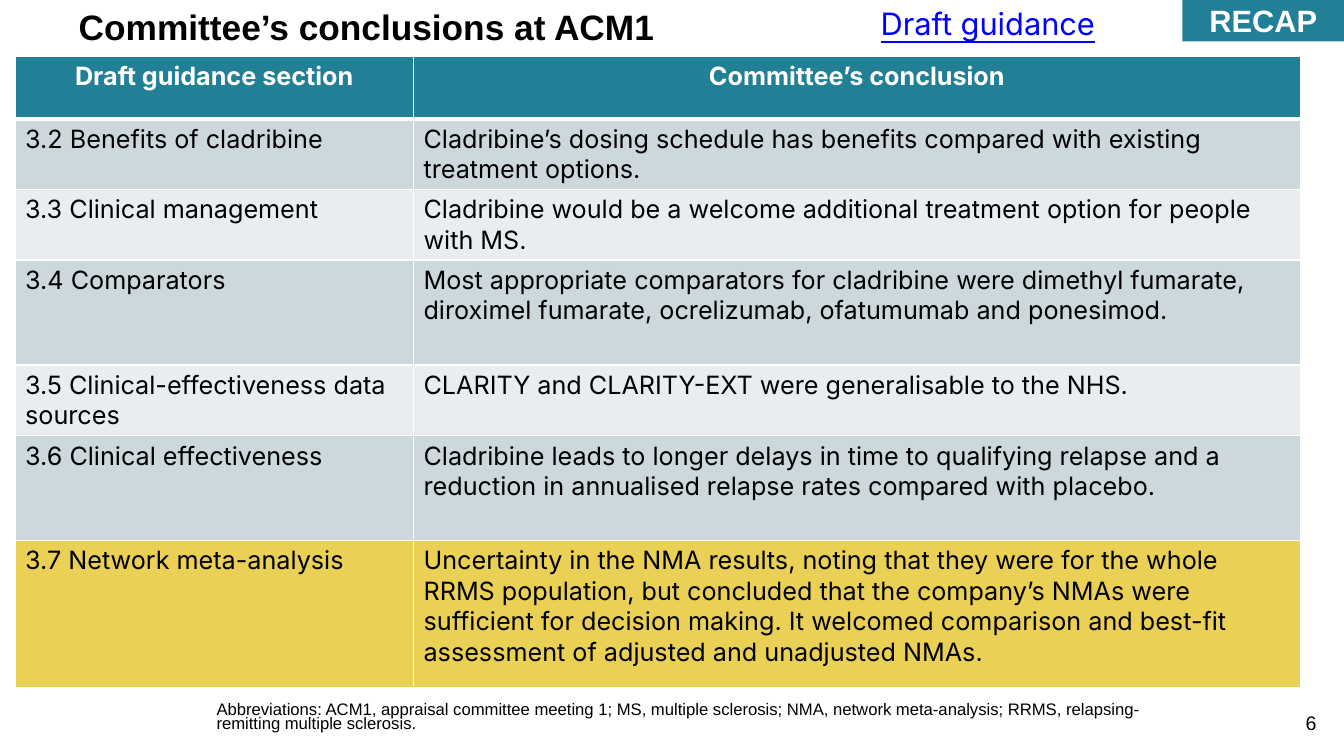
from dataclasses import dataclass

from pptx import Presentation
from pptx import util as u
from pptx.dml import color
from pptx.enum import shapes, text
from pptx.oxml import ns, xmlchemy


@dataclass(frozen=True)
class Theme:
    """Colours, typefaces and type sizes of the deck."""
    teal: str = "228096"
    band_dark: str = "CDD8DD"
    band_light: str = "E8EDEF"
    highlight: str = "EAD054"
    white: str = "FFFFFF"
    black: str = "000000"
    link: str = "0000FF"
    heading_font: str = "Arial"
    body_font: str = "Inter"
    title_size: float = 25.2
    label_size: float = 22
    table_size: float = 18
    number_size: float = 14
    note_size: float = 11.9


THEME = Theme()
HEADERS = ("Draft guidance section", "Committee’s conclusion")
CONCLUSIONS = (
    ("3.2 Benefits of cladribine",
     "Cladribine’s dosing schedule has benefits compared with existing treatment options."),
    ("3.3 Clinical management",
     "Cladribine would be a welcome additional treatment option for people with MS."),
    ("3.4 Comparators",
     "Most appropriate comparators for cladribine were dimethyl fumarate, diroximel fumarate, "
     "ocrelizumab, ofatumumab and ponesimod."),
    ("3.5 Clinical-effectiveness data sources",
     "CLARITY and CLARITY-EXT were generalisable to the NHS."),
    ("3.6 Clinical effectiveness",
     "Cladribine leads to longer delays in time to qualifying relapse and a reduction in "
     "annualised relapse rates compared with placebo."),
    ("3.7 Network meta-analysis",
     "Uncertainty in the NMA results, noting that they were for the whole RRMS population, but "
     "concluded that the company’s NMAs were sufficient for decision making. It welcomed "
     "comparison and best-fit assessment of adjusted and unadjusted NMAs."),
)
COLUMN_SHARES = (0.31, 0.69)
ROW_HEIGHTS = (44.6, 50.4, 50.4, 75, 50.4, 75, 105.2)


def rgb(value):
    """Turn a hex string into a colour."""
    return color.RGBColor.from_string(value)


def write(frame, words, size, font, ink, bold=False, underline=False, align=None):
    """Write one run into the first paragraph of a frame and return the paragraph."""
    frame.word_wrap = True
    para = frame.paragraphs[0]
    para.alignment = align or text.PP_ALIGN.LEFT
    span = para.add_run()
    span.text = words
    span.font.size = u.Pt(size)
    span.font.name = font
    span.font.bold = bold
    span.font.underline = underline
    span.font.color.rgb = rgb(ink)
    return para


def add_text(page, box, *args, **style):
    """Place a text box and return its frame and paragraph."""
    frame = page.shapes.add_textbox(*map(u.Pt, box)).text_frame
    return frame, write(frame, *args, **style)


def add_border(cell, side, width):
    """Draw one white border of a cell."""
    line = xmlchemy.OxmlElement(f"a:ln{side}")
    line.set("w", str(u.Pt(width)))
    fill = xmlchemy.OxmlElement("a:solidFill")
    ink = xmlchemy.OxmlElement("a:srgbClr")
    ink.set("val", THEME.white)
    fill.append(ink)
    line.append(fill)
    cell._tc.get_or_add_tcPr().append(line)


def add_header(page, box):
    """Place the title, the guidance label and the recap tag along the top."""
    left, top, width, height = box
    frame, para = add_text(page, (left, top + 3.6, 885.6, 33.8),
                           "Committee’s conclusions at ACM1", THEME.title_size,
                           THEME.heading_font, THEME.black, bold=True)
    frame.margin_left = u.Pt(56.2)
    frame.vertical_anchor = text.MSO_ANCHOR.MIDDLE
    para.line_spacing = 0.9
    add_text(page, (left + 622, top, 179.3, 33.8), "Draft guidance", THEME.label_size,
             THEME.body_font, THEME.link, underline=True)
    tag_width = 115.4
    tag = page.shapes.add_shape(shapes.MSO_SHAPE.RECTANGLE, u.Pt(left + width - tag_width),
                                u.Pt(top), u.Pt(tag_width), u.Pt(height))
    tag.shadow.inherit = False
    tag.fill.solid()
    tag.fill.fore_color.rgb = rgb(THEME.teal)
    tag.line.fill.background()
    tag.text_frame.vertical_anchor = text.MSO_ANCHOR.MIDDLE
    write(tag.text_frame, "RECAP", THEME.label_size, THEME.heading_font, THEME.white,
          bold=True, align=text.PP_ALIGN.CENTER)


def add_conclusions(page, box):
    """Place the table of conclusions with banded rows and a highlighted last row."""
    rows = (HEADERS, *CONCLUSIONS)
    table = page.shapes.add_table(len(rows), len(HEADERS), *map(u.Pt, box)).table
    for column, share in zip(table.columns, COLUMN_SHARES):
        column.width = u.Pt(round(box[2] * share, 2))
    last = len(rows) - 1
    for index, words in enumerate(rows):
        table.rows[index].height = u.Pt(ROW_HEIGHTS[index])
        header = index == 0
        band = THEME.band_dark if index % 2 else THEME.band_light
        fill = THEME.teal if header else THEME.highlight if index == last else band
        widths = {"L": 1, "R": 1, "T": 3 if index == 1 else 1, "B": 3 if header else 1}
        for cell, entry in zip(table.rows[index].cells, words):
            for side, width in widths.items():
                add_border(cell, side, width)
            cell.fill.solid()
            cell.fill.fore_color.rgb = rgb(fill)
            write(cell.text_frame, entry, THEME.table_size, THEME.body_font,
                  THEME.white if header else THEME.black, bold=header,
                  align=text.PP_ALIGN.CENTER if header else None)


def add_footer(page, box):
    """Place the abbreviations and the page number along the bottom."""
    left, top, width, height = box
    _, para = add_text(page, (left + 147.6, top, 715.7, height),
                       "Abbreviations: ACM1, appraisal committee meeting 1; MS, multiple "
                       "sclerosis; NMA, network meta-analysis; RRMS, relapsing-remitting "
                       "multiple sclerosis.",
                       THEME.note_size, THEME.heading_font, THEME.black)
    para.line_spacing = 0.7
    add_text(page, (left + width - 49.2, top + 4.3, 36.7, height), "6", THEME.number_size,
             THEME.heading_font, THEME.black, align=text.PP_ALIGN.RIGHT)


def main():
    """Build the deck and save it."""
    deck = Presentation()
    deck.slide_width, deck.slide_height = u.Pt(960), u.Pt(540)
    page = deck.slides.add_slide(deck.slide_layouts[6])
    add_header(page, (0, 0, 960, 29.5))
    add_conclusions(page, (10.8, 40.3, 918, sum(ROW_HEIGHTS)))
    add_footer(page, (0, 499.7, 960, 28.8))
    deck.save("out.pptx")


if __name__ == "__main__":
    main()
